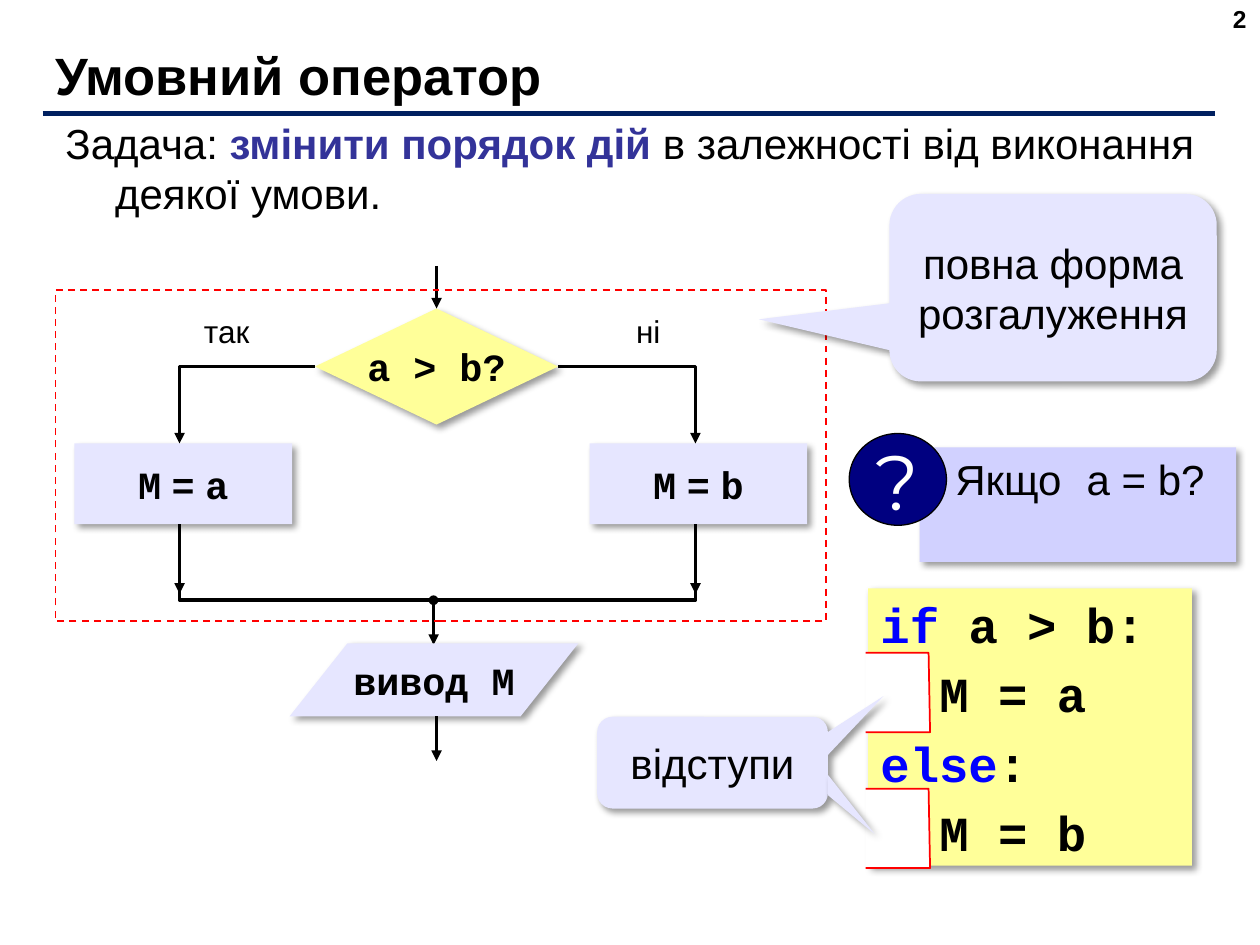
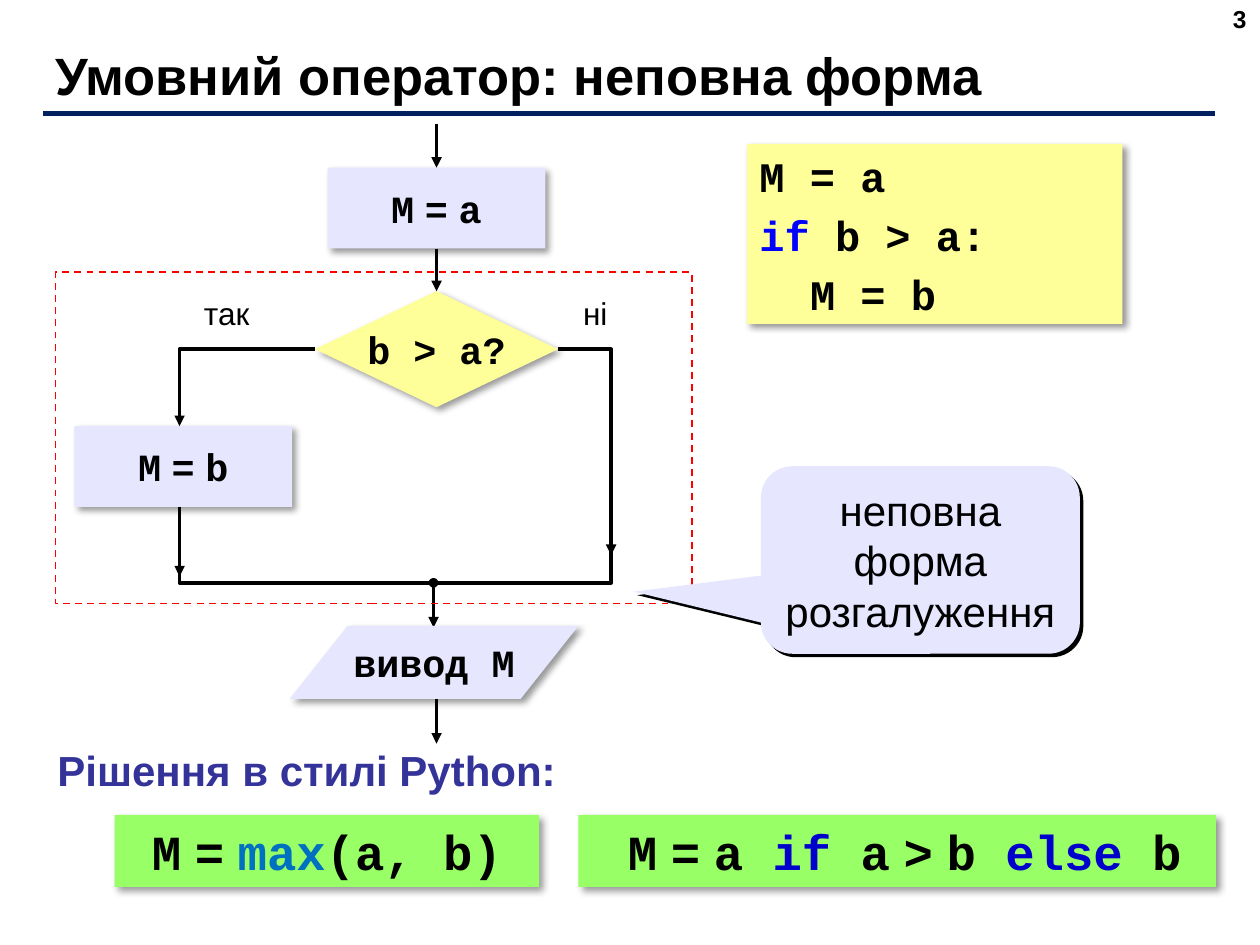
from lxml import etree
from pptx import Presentation
from pptx.dml.color import RGBColor
from pptx.enum import dml, shapes, text
from pptx.oxml.ns import qn
from pptx.util import Cm, Pt

# Shared colours, fonts and short names
BLACK = RGBColor(0, 0, 0)
WHITE = RGBColor(255, 255, 255)
RED = RGBColor(255, 0, 0)
NAVY = RGBColor(0, 0x20, 0x60)
DISC = RGBColor(0, 0, 0x80)
INDIGO = RGBColor(0x33, 0x33, 0x99)
LILAC = RGBColor(0xE6, 0xE6, 0xFF)
MAUVE = RGBColor(0xD1, 0xD1, 0xFF)
CREAM = RGBColor(0xFF, 0xFF, 0x99)
LIME = RGBColor(0x99, 0xFF, 0x66)
KEY = RGBColor(0, 0, 0xFF)
WORD = RGBColor(0, 0, 0xCC)
FUNC = RGBColor(0, 0x70, 0xC0)
SANS, MONO = "Arial", "Courier New"
FORM = shapes.MSO_SHAPE
LEFT, MID, RIGHT = text.PP_ALIGN.LEFT, text.PP_ALIGN.CENTER, text.PP_ALIGN.RIGHT
TOP, CORE = text.MSO_ANCHOR.TOP, text.MSO_ANCHOR.MIDDLE

# Flowchart measures in cm, from the corner of the dashed frame
FRAME_H = 6.68
STEP_W, STEP_H, STEP_X, STEP_Y = 4.39, 1.63, 0.38, 3.1
TEST = (5.23, 0.38, 4.9, 2.34)
AXIS = TEST[0] + TEST[2] / 2
FORK = TEST[1] + TEST[3] / 2
YES_X, JOIN_X, JOIN_Y = 2.5, 7.62, 6.26
ENTRY = -0.48


def tight(code):
    """Runs of code whose spaces are set in the narrower font."""
    return [(c, {"font": SANS} if c == " " else {}) for c in code]


def write(shape, paras, size=24, font=SANS, color=BLACK, bold=False, align=LEFT,
          anchor=TOP, wrap=True, before=0, left=0, first=0, steps=None):
    """Fill a shape; a paragraph is a string or a list of (text, format) runs."""
    frame = shape.text_frame
    frame.word_wrap, frame.vertical_anchor = wrap, anchor
    for i, runs in enumerate([paras] if isinstance(paras, str) else paras):
        para = frame.paragraphs[0] if i == 0 else frame.add_paragraph()
        para.alignment, para.space_before = align, Pt(before)
        props = para._p.get_or_add_pPr()
        props.set("marL", str(Cm(steps[i] if steps else left)))
        props.set("indent", str(Cm(first)))
        for words, form in [(runs, {})] if isinstance(runs, str) else runs:
            run = para.add_run()
            run.text = words
            run.font.size = Pt(size)
            run.font.name = form.get("font", font)
            run.font.bold = form.get("bold", bold)
            run.font.color.rgb = form.get("color", color)
    return shape


def style(shape, fill=None, line=None, width=1, shade=None):
    """Set fill, line and shadow; shade is (opacity %, blur pt, distance pt)."""
    if fill is None:
        shape.fill.background()
    else:
        shape.fill.solid()
        shape.fill.fore_color.rgb = fill
    if line is None:
        shape.line.fill.background()
    else:
        shape.line.color.rgb = line
        shape.line.width = Pt(width)
    shape.shadow.inherit = False
    if shade:
        alpha, blur, dist = shade
        effects = shape.element.spPr.find(qn("a:effectLst"))
        outer = etree.SubElement(effects, qn("a:outerShdw"), blurRad=str(Pt(blur)),
                                 dist=str(Pt(dist)), dir="2700000", algn="ctr",
                                 rotWithShape="0")
        tint = etree.SubElement(outer, qn("a:srgbClr"), val=str(BLACK))
        etree.SubElement(tint, qn("a:alpha"), val=str(alpha * 1000))
    return shape


SOFT = (40, 4, 3)
HARD = (100, 0, 2.8)


def place(slide, form, box, fill=None, **look):
    shape = slide.shapes.add_shape(form, *map(Cm, box))
    return style(shape, fill, **look)


def label(slide, box, paras, **form):
    return write(slide.shapes.add_textbox(*map(Cm, box)), paras, **form)


def tip(shape):
    line = shape.element.spPr.find(qn("a:ln"))
    etree.SubElement(line, qn("a:tailEnd"), type="triangle")


def trace(slide, points, arrow=False, close=False, **look):
    spots = [(Cm(x), Cm(y)) for x, y in points]
    pen = slide.shapes.build_freeform(*spots[0], scale=1.0)
    pen.add_line_segments(spots[1:], close=close)
    shape = style(pen.convert_to_shape(), **look)
    if arrow:
        tip(shape)
    return shape


def link(slide, start, end, source=None, target=None, color=BLACK, width=2, arrow=True):
    """Draw a straight line, joined to the bottom of source and top of target."""
    line = slide.shapes.add_connector(shapes.MSO_CONNECTOR.STRAIGHT,
                                      *map(Cm, start + end))
    line.line.color.rgb, line.line.width = color, Pt(width)
    if source is not None:
        line.begin_connect(source, 2)
    if target is not None:
        line.end_connect(target, 0)
    if arrow:
        tip(line)
    etree.SubElement(line.element.spPr, qn("a:effectLst"))


def begin(deck, title, number):
    """Add a slide with its title, number and rule."""
    slide = deck.slides.add_slide(deck.slide_layouts[5])
    head = slide.shapes.title
    head.left, head.top, head.width, head.height = map(Cm, (0.86, 0.84, 23.27, 1.32))
    write(head, title, size=30, bold=True, anchor=CORE)
    label(slide, (19.46, -0.05, 5.92, 1.32), str(number), size=14, bold=True, align=RIGHT)
    link(slide, (0.86, 2.29), (24.49, 2.29), color=NAVY, width=3, arrow=False)
    return slide


def node(slide, form, box, paras, fill=LILAC):
    shape = place(slide, form, box, fill, shade=SOFT)
    return write(shape, paras, size=22, font=MONO, bold=True, align=MID,
                 anchor=CORE, wrap=False)


def callout(slide, box, words, aim, shade=SOFT):
    shape = place(slide, FORM.ROUNDED_RECTANGULAR_CALLOUT, box, LILAC, shade=shade)
    for i, value in enumerate((*aim, 0.167)):
        shape.adjustments[i] = value
    write(shape, words, align=MID, anchor=CORE)


def listing(slide, box, paras, fill=CREAM, **form):
    write(place(slide, FORM.RECTANGLE, box, fill, shade=SOFT), paras,
          font=MONO, bold=True, **form)


def flow(slide, box, test, yes, no=None, before=None, bend=12.9, drop=STEP_Y, no_x=11):
    """Draw a branching flowchart around the dashed frame given by box."""
    x, y, w, h = box

    def at(dx, dy):
        return x + dx, y + dy

    def step(dx, dy, code):
        return node(slide, FORM.RECTANGLE, (*at(dx, dy), STEP_W, STEP_H), tight(code)
                    and [tight(code)])

    # Test and the way into it
    gate = node(slide, FORM.FLOWCHART_DECISION, (*at(*TEST[:2]), *TEST[2:]), test, CREAM)
    first = None
    if before:
        first = step(AXIS - STEP_W / 2, ENTRY - STEP_H, before)
        link(slide, at(AXIS, -3), at(AXIS, ENTRY - STEP_H), target=first)
    link(slide, at(AXIS, ENTRY), at(AXIS, TEST[1]), source=first, target=gate)

    # Two branches
    step(STEP_X, STEP_Y, yes)
    if no:
        step(bend - STEP_W / 2 + 0.06, STEP_Y, no)
    for edge, turn, end in ((TEST[0], YES_X, STEP_Y),
                            (TEST[0] + TEST[2], bend, drop)):
        trace(slide, [at(edge, FORK), at(turn, FORK), at(turn, end)],
              arrow=True, line=BLACK, width=2)

    # Branches meet again
    foot = STEP_Y + STEP_H
    trace(slide, [at(YES_X, foot), at(YES_X, JOIN_Y), at(bend, JOIN_Y), at(bend, foot)],
          line=BLACK, width=2)
    for turn in (YES_X, bend) if no else (YES_X,):
        link(slide, at(turn, 5.25), at(turn, 6.13))
    link(slide, at(JOIN_X, JOIN_Y), at(JOIN_X, 7.16))
    place(slide, FORM.OVAL, (*at(JOIN_X - 0.08, JOIN_Y - 0.08), 0.16, 0.16),
          BLACK, line=BLACK)

    # Branch labels and output
    for dx, word in ((YES_X, "так"), (no_x, "ні")):
        label(slide, (*at(dx, 0.32), 1.9, 1.04), word, size=18, align=MID)
    node(slide, FORM.FLOWCHART_DATA, (*at(4.72, 7.13), 5.82, 1.47), "вивод M")
    link(slide, at(AXIS, 8.6), at(AXIS, 9.5))

    rim = place(slide, FORM.RECTANGLE, box, line=RED)
    rim.line.dash_style = dml.MSO_LINE.DASH


def question(slide, box):
    x, y, w, h = box
    note = place(slide, FORM.RECTANGLE, (x + 1.42, y + 0.28, w - 1.42, h - 0.28),
                 MAUVE, shade=SOFT)
    write(note, [[("Якщо", {}), (" ", {"font": MONO}), ("a = b?", {})]], left=0.47)
    disc = place(slide, FORM.OVAL, (x, y, 1.96, 1.85), DISC, line=BLACK, width=0.75)
    write(disc, "?", size=44, font="Montserrat", color=WHITE, align=MID,
          anchor=CORE, wrap=False)


def indents(slide, box):
    """Mark the two code indents and point a callout at both."""
    x, y, w, h = box
    for top in (y, y + 2.74):
        trace(slide, [(x + w - 1.3, top), (x + w - 0.03, top),
                      (x + w, top + 1.6), (x + w - 1.3, top + 1.6)],
              fill=WHITE, line=RED)
    callout(slide, (x, y + 1.29, 4.65, 1.85), "відступи", (0.741, -0.725))
    trace(slide, [(x + 4.65, y + 2.87), (x + 5.59, y + 3.65), (x + 4.65, y + 2.46)],
          close=True, fill=LILAC, shade=SOFT)


def full(deck):
    slide = begin(deck, "Умовний оператор", 2)
    label(slide, (1.07, 2.24, 23.5, 2.31),
          [[("Задача: ", {}),
            ("змінити порядок дій ", {"bold": True, "color": INDIGO}),
            ("в залежності від виконання деякої умови.", {})]], left=1, first=-1)
    flow(slide, (1.12, 5.84, 15.54, FRAME_H), "a > b?", "M = a", no="M = b")
    callout(slide, (17.93, 3.91, 6.6, 3.78), "повна форма розгалуження", (-0.899, 0.169))
    question(slide, (17.12, 8.74, 7.8, 2.59))
    listing(slide, (17.5, 11.86, 6.53, 5.59),
            [[("if", {"color": KEY}), (" a > b:", {})], "M = a",
             [("else", {"color": KEY}), (":", {})], "M = b"],
            size=28, before=6, steps=(0, 1.19, 0, 1.19))
    indents(slide, (12.04, 13.16, 6.71, 4.34))


def partial(deck):
    slide = begin(deck, "Умовний оператор: неповна форма", 3)
    flow(slide, (1.12, 5.49, 12.83, FRAME_H), "b > a?", "M = b", before="M = a",
         bend=11.2, drop=5.7, no_x=9.93)
    callout(slide, (15.34, 9.4, 6.43, 3.78), "неповна форма розгалуження",
            (-0.899, 0.169), HARD)
    listing(slide, (15.06, 2.9, 7.57, 3.63),
            ["M = a", [("if", {"color": KEY}), (" b > a:", {})], "M = b"],
            before=5, steps=(0, 0, 1.02))

    # Short forms in Python
    label(slide, (0.91, 14.88, 10.64, 1.27), "Рішення в стилі Python:",
          color=INDIGO, bold=True, wrap=False)
    listing(slide, (2.31, 16.43, 8.56, 1.45),
            [tight("M = ") + [("max", {"color": FUNC}), ("(a, b)", {})]],
            LIME, size=28, align=MID)
    listing(slide, (11.66, 16.43, 12.85, 1.45),
            [tight("M = a") + [(" ", {}), ("if", {"color": WORD}), (" ", {})]
             + tight("a > b") + [(" ", {}), ("else", {"color": WORD}), (" b", {})]],
            LIME, size=28, align=text.PP_ALIGN.JUSTIFY, left=0.5, first=0.25)


def main():
    deck = Presentation()
    deck.slide_width, deck.slide_height = Cm(25.4), Cm(19.05)
    full(deck)
    partial(deck)
    deck.save("out.pptx")


if __name__ == "__main__":
    main()
